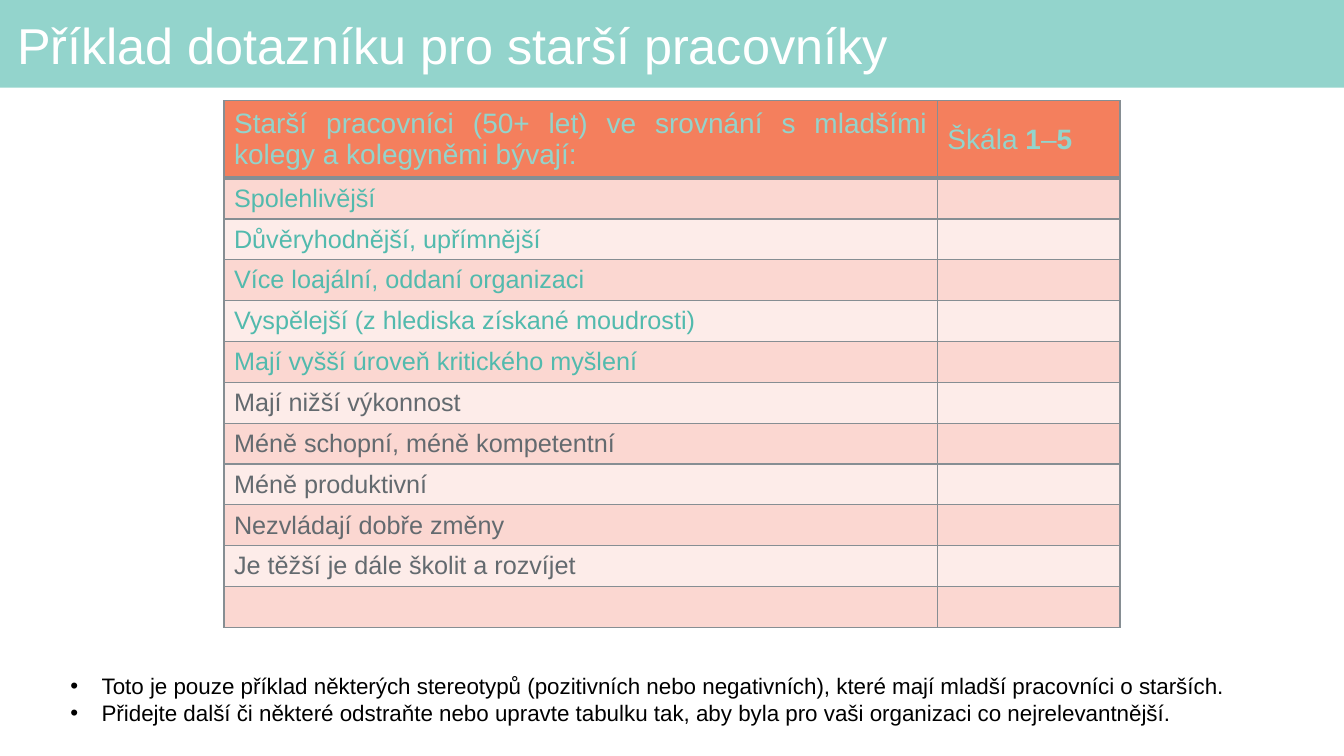
from lxml import etree
from pptx import Presentation, util as u
from pptx.dml.color import RGBColor
from pptx.enum import shapes, text
from pptx.oxml import ns

SLIDE_W, SLIDE_H = u.Inches(13.333), u.Inches(7.5)
COLUMN, ROW = SLIDE_W / 120, SLIDE_H / 75
FONT = "Arial"

WHITE = RGBColor(0xFF, 0xFF, 0xFF)
BLACK = RGBColor(0, 0, 0)
MINT = RGBColor(0x93, 0xD4, 0xCC)
TEAL = RGBColor(0x52, 0xBA, 0xAD)
GREY = RGBColor(0x63, 0x6A, 0x6F)
BORDER = RGBColor(0x86, 0x8E, 0x93)
ORANGE = RGBColor(0xF4, 0x7F, 0x5D)
BANDS = RGBColor(0xFB, 0xD7, 0xD1), RGBColor(0xFD, 0xEC, 0xE9)

TITLE = "Příklad dotazníku pro starší pracovníky"
QUESTION = "Starší pracovníci (50+ let) ve srovnání s mladšími kolegy a kolegyněmi bývají:"
SCALE = [("Škála ", False), ("1", True), ("–", False), ("5", True)]
POSITIVE = [
    "Spolehlivější",
    "Důvěryhodnější, upřímnější",
    "Více loajální, oddaní organizaci",
    "Vyspělejší (z hlediska získané moudrosti)",
    "Mají vyšší úroveň kritického myšlení",
]
NEGATIVE = [
    "Mají nižší výkonnost",
    "Méně schopní, méně kompetentní",
    "Méně produktivní",
    "Nezvládají dobře změny",
    "Je těžší je dále školit a rozvíjet",
]
NOTES = [
    "Toto je pouze příklad některých stereotypů (pozitivních nebo negativních), "
    "které mají mladší pracovníci o starších.",
    "Přidejte další či některé odstraňte nebo upravte tabulku tak, "
    "aby byla pro vaši organizaci co nejrelevantnější.",
]


def grid(left, top, width, height):
    return [int(n) for n in (left * COLUMN, top * ROW, width * COLUMN, height * ROW)]


def style(paragraph, size, color):
    paragraph.font.name = FONT
    paragraph.font.size = u.Pt(size)
    paragraph.font.color.rgb = color


def add_text(slide, area, lines, size, color):
    frame = slide.shapes.add_textbox(*grid(*area)).text_frame
    frame.word_wrap = True
    frame.text = "\n".join(lines)
    for paragraph in frame.paragraphs:
        style(paragraph, size, color)
    return frame


def add_title(slide):
    band = slide.shapes.add_shape(shapes.MSO_SHAPE.RECTANGLE, *grid(0, 0, 120, 8.7))
    band.shadow.inherit = False
    band.fill.solid()
    band.fill.fore_color.rgb = MINT
    band.line.fill.background()
    title = add_text(slide, (1, 0.9, 117.5, 7.8), [TITLE], 36, WHITE)
    title.vertical_anchor = text.MSO_ANCHOR.MIDDLE
    title.margin_left = title.margin_right = u.Inches(0.06)
    title.margin_top = title.margin_bottom = u.Inches(0.06)
    title.paragraphs[0].line_spacing = 0.9


def add_borders(cell, top, bottom):
    properties = cell._tc.get_or_add_tcPr()
    for side, width in (("L", 1), ("R", 1), ("T", top), ("B", bottom)):
        line = etree.SubElement(properties, ns.qn(f"a:ln{side}"), w=str(u.Pt(width)))
        fill = etree.SubElement(line, ns.qn("a:solidFill"))
        etree.SubElement(fill, ns.qn("a:srgbClr"), val=str(BORDER))


def fill_cell(cell, runs, size, color, fill, top=1, bottom=1):
    add_borders(cell, top, bottom)
    cell.fill.solid()
    cell.fill.fore_color.rgb = fill
    cell.vertical_anchor = text.MSO_ANCHOR.MIDDLE
    paragraph = cell.text_frame.paragraphs[0]
    style(paragraph, size, color)
    for words, bold in runs:
        run = paragraph.add_run()
        run.text = words
        run.font.bold = bold
    return paragraph


def add_questionnaire(slide):
    statements = [(s, TEAL) for s in POSITIVE] + [(s, GREY) for s in NEGATIVE] + [("", GREY)]
    area = grid(20, 10, 80, 51.8)
    table = slide.shapes.add_table(len(statements) + 1, 2, *area).table
    table.first_row = table.horz_banding = False
    for column, share in zip(table.columns, (63.7, 16.3)):
        column.width = int(share * COLUMN)
    table.rows[0].height = int(7.2 * ROW)
    question = fill_cell(table.cell(0, 0), [(QUESTION, False)], 20, MINT, ORANGE, bottom=3)
    question.alignment = text.PP_ALIGN.JUSTIFY
    fill_cell(table.cell(0, 1), SCALE, 20, MINT, ORANGE, bottom=3)
    for i, (statement, color) in enumerate(statements, 1):
        table.rows[i].height = int(44.6 * ROW / len(statements))
        fill, top = BANDS[(i - 1) % 2], 3 if i == 1 else 1
        runs = [(statement, False)] if statement else []
        label = fill_cell(table.cell(i, 0), runs, 18, color, fill, top)
        label.alignment = text.PP_ALIGN.JUSTIFY
        fill_cell(table.cell(i, 1), [], 18, color, fill, top)


def add_notes(slide):
    frame = add_text(slide, (5.4, 66.2, 112.6, 6.4), NOTES, 16, BLACK)
    indent = u.Inches(0.31)
    for paragraph in frame.paragraphs:
        properties = paragraph._p.get_or_add_pPr()
        properties.set("marL", str(indent))
        properties.set("indent", str(-indent))
        bullet_font = etree.Element(ns.qn("a:buFont"), typeface=FONT)
        bullet = etree.Element(ns.qn("a:buChar"), char="•")
        properties.insert(0, bullet_font)
        properties.insert(1, bullet)


def main():
    deck = Presentation()
    deck.slide_width, deck.slide_height = SLIDE_W, SLIDE_H
    slide = deck.slides.add_slide(deck.slide_layouts[6])
    add_title(slide)
    add_questionnaire(slide)
    add_notes(slide)
    deck.save("out.pptx")


if __name__ == "__main__":
    main()
